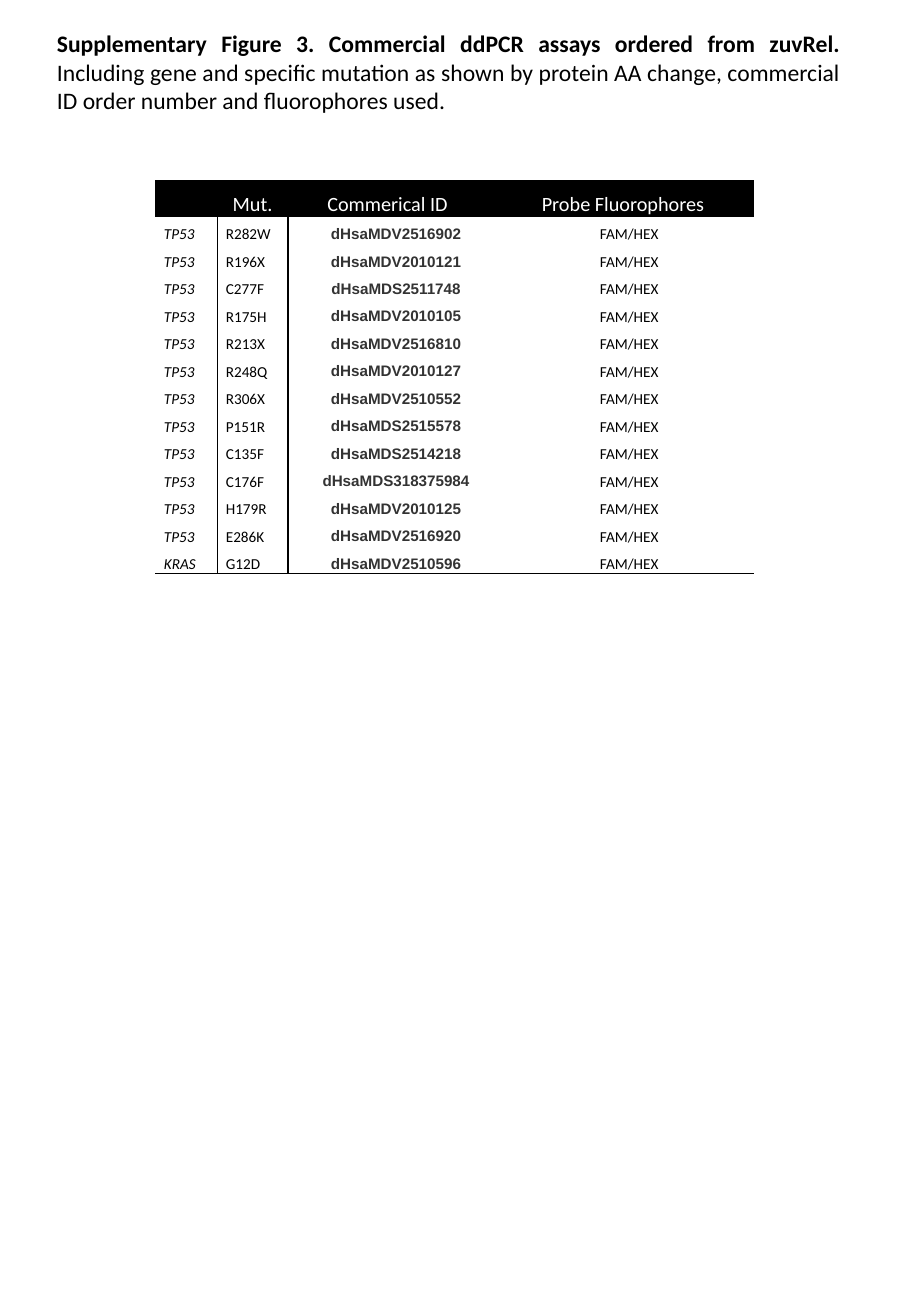
from lxml.etree import SubElement
from pptx import Presentation
from pptx.dml.color import RGBColor
from pptx.enum.text import MSO_ANCHOR as Anchor, MSO_AUTO_SIZE as AutoSize, PP_ALIGN as Align
from pptx.oxml.ns import qn
from pptx.util import Inches, Pt

BLACK = RGBColor(0, 0, 0)
WHITE = RGBColor(255, 255, 255)
DARK_GREY = RGBColor(0x33, 0x33, 0x33)
NO_GRID_STYLE = "{2D5ABB26-0587-4C30-8999-92F81FD0307C}"

COLUMN_WIDTHS = [0.51, 0.58, 1.68, 0.1, 2.06]
HEADER_HEIGHT = 0.27
ROW_HEIGHT = 0.2
HEADERS = ["", "Mut.", "Commerical ID ", "Probe Fluorophores"]
FLUOROPHORES = "FAM/HEX"
ASSAYS = [
    ("TP53", "R282W", "dHsaMDV2516902"),
    ("TP53", "R196X", "dHsaMDV2010121"),
    ("TP53", "C277F", "dHsaMDS2511748"),
    ("TP53", "R175H", "dHsaMDV2010105"),
    ("TP53", "R213X", "dHsaMDV2516810"),
    ("TP53", "R248Q", "dHsaMDV2010127"),
    ("TP53", "R306X", "dHsaMDV2510552"),
    ("TP53", "P151R", "dHsaMDS2515578"),
    ("TP53", "C135F", "dHsaMDS2514218"),
    ("TP53", "C176F", "dHsaMDS318375984"),
    ("TP53", "H179R", "dHsaMDV2010125"),
    ("TP53", "E286K", "dHsaMDV2516920"),
    ("KRAS", "G12D", "dHsaMDV2510596"),
]


def add_text(para, text, size=9, font="Calibri", color=BLACK, bold=False, italic=False):
    span = para.add_run()
    span.text = text
    span.font.size = Pt(size)
    span.font.name = font
    span.font.color.rgb = color
    span.font.bold = bold
    span.font.italic = italic


def add_caption(page):
    box = page.shapes.add_textbox(Inches(0.37), Inches(0.19), Inches(6.65), Inches(0.81))
    frame = box.text_frame
    frame.word_wrap = True
    frame.auto_size = AutoSize.SHAPE_TO_FIT_TEXT
    para = frame.paragraphs[0]
    para.alignment = Align.JUSTIFY
    add_text(para, "Supplementary Figure 3. Commercial ddPCR assays ordered from zuvRel. ",
             size=14, bold=True)
    add_text(para, "Including gene and specific mutation as shown by protein AA change, "
             "commercial ID order number and fluorophores used. ", size=14)


def draw_borders(cell, sides):
    properties = cell._tc.get_or_add_tcPr()
    for side in sides:
        line = SubElement(properties, qn(f"a:ln{side}"), w=str(Pt(1)))
        fill = SubElement(line, qn("a:solidFill"))
        SubElement(fill, qn("a:srgbClr"), val=str(BLACK))


def fill_cell(cell, text, align=Align.CENTER, anchor=Anchor.MIDDLE, **style):
    cell.margin_left = cell.margin_right = Inches(0.07)
    cell.margin_top = cell.margin_bottom = 0
    cell.vertical_anchor = anchor
    para = cell.text_frame.paragraphs[0]
    para.alignment = align
    para.line_spacing = 1.5
    if text:
        add_text(para, text, **style)
    else:
        para._p.get_or_add_endParaRPr().set("sz", "1000")


def add_assay_table(page):
    rows, columns = len(ASSAYS) + 1, len(COLUMN_WIDTHS)
    frame = page.shapes.add_table(rows, columns, Inches(1.28), Inches(1.48),
                                  Inches(sum(COLUMN_WIDTHS)),
                                  Inches(HEADER_HEIGHT + ROW_HEIGHT * len(ASSAYS)))
    table = frame.table
    table.first_row = table.horz_banding = False
    table._tbl.tblPr.find(qn("a:tableStyleId")).text = NO_GRID_STYLE
    for column, width in zip(table.columns, COLUMN_WIDTHS):
        column.width = Inches(width)
    for index, row in enumerate(table.rows):
        row.height = Inches(ROW_HEIGHT if index else HEADER_HEIGHT)
        for position, cell in enumerate(row.cells):
            sides = ["L", "R"] if index and position == 1 else []
            if index in (0, rows - 1):
                sides.append("B")
            draw_borders(cell, sides)
            if index:
                cell.fill.background()
            else:
                cell.fill.solid()
                cell.fill.fore_color.rgb = BLACK

    table.cell(0, 3).merge(table.cell(0, 4))
    for position, title in enumerate(HEADERS):
        fill_cell(table.cell(0, position), title, anchor=Anchor.BOTTOM, size=12, color=WHITE)
    for index, (gene, mutation, order_id) in enumerate(ASSAYS, 1):
        table.cell(index, 2).merge(table.cell(index, 3))
        fill_cell(table.cell(index, 0), gene, align=Align.LEFT, italic=True)
        fill_cell(table.cell(index, 1), mutation, align=Align.LEFT)
        fill_cell(table.cell(index, 2), order_id, font="Arial", color=DARK_GREY, bold=True)
        fill_cell(table.cell(index, 4), FLUOROPHORES)


def main():
    deck = Presentation()
    deck.slide_width = Inches(7.5)
    deck.slide_height = Inches(10.83)
    page = deck.slides.add_slide(deck.slide_layouts[6])
    add_caption(page)
    add_assay_table(page)
    deck.save("out.pptx")


if __name__ == "__main__":
    main()
